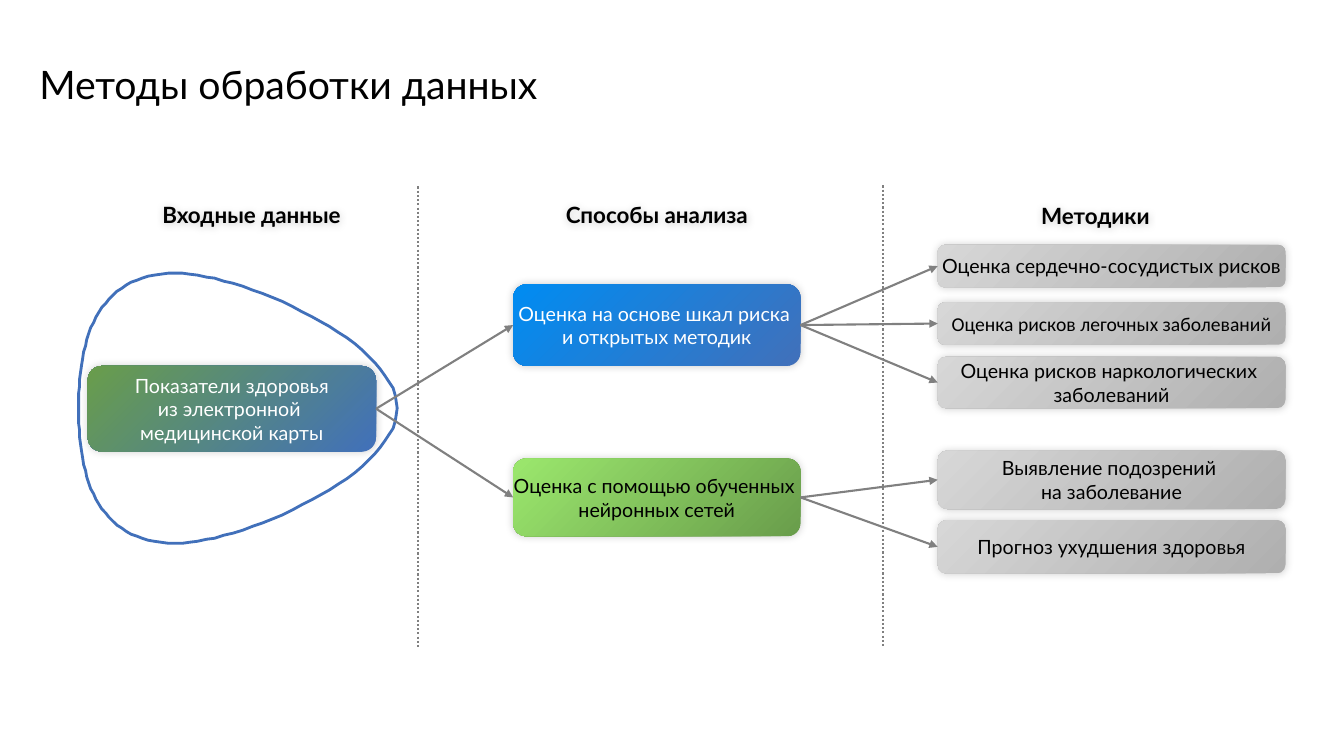
from dataclasses import dataclass

from lxml import etree
from pptx import Presentation
from pptx import util as u
from pptx.dml.color import RGBColor
from pptx.enum import dml, shapes, text
from pptx.oxml import ns

PX = 9144  # one px is a hundredth of an inch


@dataclass(frozen=True)
class Theme:
    font: str = "Lato"
    plain: str = "Calibri"
    black: str = "000000"
    white: str = "FFFFFF"
    blue: str = "4170BA"
    sky: str = "008CF2"
    green: str = "699D4B"
    lime: str = "9BE76D"
    steel: str = "AFAFAF"
    silver: str = "D7D7D7"
    rule: str = "808080"
    title: int = 28
    head: int = 16
    body: int = 14


def rgb(code):
    return RGBColor.from_string(code)


def write(frame, words, size, color, font, bold=False, align=None):
    """Fill a text frame; \\n starts a paragraph, \\v breaks a line."""
    frame.text = words
    for para in frame.paragraphs:
        para.alignment = align
        for run in para.runs:
            run.font.size = u.Pt(size)
            run.font.name = font
            run.font.bold = bold
            run.font.color.rgb = rgb(color)


def add(parent, tag, **attrs):
    return etree.SubElement(parent, ns.qn(tag), attrs)


def curve(a, b, c, d, steps=30):
    """Points of a cubic curve from a to d, without its last point."""
    for t in (i / steps for i in range(steps)):
        s = 1 - t
        yield tuple(s**3 * p + 3 * s * s * t * q + 3 * s * t * t * r + t**3 * e
                    for p, q, r, e in zip(a, b, c, d))


class Board:
    def __init__(self, slide, theme):
        self.items = slide.shapes
        self.theme = theme

    def shade(self, item, soft=True):
        """Give an item a soft shadow, or none at all."""
        list_ = add(item._element.spPr, "a:effectLst")
        if soft:
            cast = add(list_, "a:outerShdw", blurRad=str(u.Pt(6)), dist="0",
                       dir="18900000", algn="ctr", rotWithShape="0")
            color = add(cast, "a:srgbClr", val=self.theme.black)
            add(color, "a:alpha", val="20000")

    def label(self, words, x, y, w, h, size, inset=None, soft=False, **style):
        item = self.items.add_textbox(x * PX, y * PX, w * PX, h * PX)
        frame = item.text_frame
        frame.word_wrap = True
        frame.auto_size = text.MSO_AUTO_SIZE.SHAPE_TO_FIT_TEXT
        if inset is not None:
            frame.margin_left = frame.margin_right = inset
            frame.margin_top = frame.margin_bottom = inset
        write(frame, words, size, self.theme.black, self.theme.font, **style)
        if soft:
            self.shade(item)

    def box(self, words, x, y, w, h, tones, color, font=None):
        item = self.items.add_shape(shapes.MSO_SHAPE.ROUNDED_RECTANGLE,
                                    x * PX, y * PX, w * PX, h * PX)
        item.adjustments[0] = 0.167
        item.fill.gradient()
        item.fill.gradient_angle = 135
        for stop, tone in zip(item.fill.gradient_stops, tones):
            stop.color.rgb = rgb(tone)
        item.line.fill.background()
        self.shade(item)
        frame = item.text_frame
        frame.word_wrap = False
        frame.vertical_anchor = text.MSO_ANCHOR.MIDDLE
        write(frame, words, self.theme.body, color, font or self.theme.font,
              align=text.PP_ALIGN.CENTER)
        return item

    def line(self, x1=0, y1=0, x2=0, y2=0):
        item = self.items.add_connector(shapes.MSO_CONNECTOR.STRAIGHT,
                                        x1 * PX, y1 * PX, x2 * PX, y2 * PX)
        item.line.color.rgb = rgb(self.theme.rule)
        item.line.width = u.Pt(1.5)
        return item

    def split(self, x, top, end):
        item = self.line(x, top, x, end)
        item.line.dash_style = dml.MSO_LINE.ROUND_DOT
        self.shade(item, soft=False)

    def arrow(self, start, end):
        item = self.line()
        item.begin_connect(start, 3)  # right side
        item.end_connect(end, 1)  # left side
        add(item.line._get_or_add_ln(), "a:tailEnd", type="triangle")
        self.shade(item, soft=False)

    def loop(self, points):
        pen = self.items.build_freeform(*points[0], scale=PX)
        pen.add_line_segments(points[1:], close=True)
        item = pen.convert_to_shape()
        item.fill.background()
        item.line.color.rgb = rgb(self.theme.blue)
        item.line.width = u.Pt(2)
        self.shade(item, soft=False)


def main():
    deck = Presentation()
    deck.slide_width, deck.slide_height = 1333 * PX, 750 * PX
    theme = Theme()
    board = Board(deck.slides.add_slide(deck.slide_layouts[6]), theme)

    # Loop around the input data: the upper half, then its mirror
    mid = 405
    half = [*curve((78, mid), (78, 330), (100, 271), (174, 271)),
            *curve((174, 271), (240, 271), (394, 340), (394, mid)), (394, mid)]
    board.loop(half + [(x, 2 * mid - y) for x, y in half[-2:0:-1]])

    # Title and column heads
    board.label("Методы обработки данных", 39, 60, 549, 47, theme.title, inset=0)
    for words, x, y in (("Входные данные", 39, 195),
                        ("Способы анализа", 441, 195),
                        ("Методики", 876, 196)):
        board.label(words, x, y, 421, 37, theme.head, soft=True, bold=True,
                    align=text.PP_ALIGN.CENTER)

    # Input data and the two ways of analysis
    data = board.box("Показатели здоровья\nиз электронной \vмедицинской карты",
                     87, 363, 286, 85, (theme.blue, theme.green), theme.white)
    scale = board.box("Оценка на основе шкал риска \nи открытых методик",
                      509, 282, 285, 81, (theme.blue, theme.sky), theme.white)
    net = board.box("Оценка с помощью обученных \nнейронных сетей",
                    509, 455, 285, 77, (theme.green, theme.lime), theme.black)
    for way in (scale, net):
        board.arrow(data, way)

    # Methods, each tied to its way of analysis
    for way, words, y, h, font in (
            (scale, "Оценка сердечно-сосудистых рисков", 243, 42, theme.font),
            (scale, "Оценка рисков легочных заболеваний", 300, 42, theme.plain),
            (scale, "Оценка рисков наркологических \vзаболеваний", 354, 51, theme.font),
            (net, "Выявление подозрений \vна заболевание", 447, 58, theme.font),
            (net, "Прогноз ухудшения здоровья", 516, 53, theme.font)):
        goal = board.box(words, 930, y, 345, h, (theme.steel, theme.silver),
                         theme.black, font)
        board.arrow(way, goal)

    # Column dividers
    board.split(415, 185, 643)
    board.split(876, 184, 642)

    deck.save("out.pptx")


if __name__ == "__main__":
    main()
